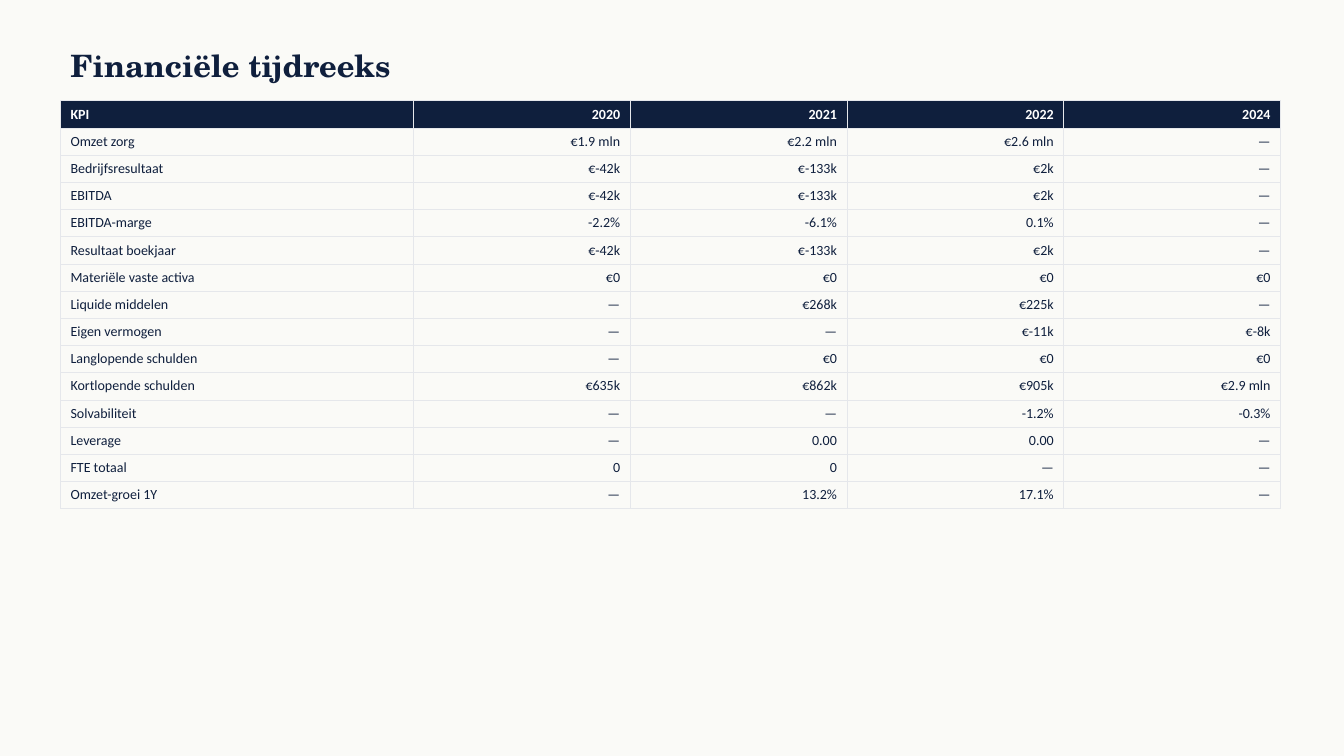
import pptx
import pptx.dml.color
import pptx.enum.text
import pptx.oxml
import pptx.util
from pptx.util import Inches

NAVY = "0F1F3D"
WHITE = "FFFFFF"
PAPER = "FAFAF7"
GRID = "E5E7EB"

KPI_ROWS = [
    ("KPI", "2020", "2021", "2022", "2024"),
    ("Omzet zorg", "€1.9 mln", "€2.2 mln", "€2.6 mln", "—"),
    ("Bedrijfsresultaat", "€-42k", "€-133k", "€2k", "—"),
    ("EBITDA", "€-42k", "€-133k", "€2k", "—"),
    ("EBITDA-marge", "-2.2%", "-6.1%", "0.1%", "—"),
    ("Resultaat boekjaar", "€-42k", "€-133k", "€2k", "—"),
    ("Materiële vaste activa", "€0", "€0", "€0", "€0"),
    ("Liquide middelen", "—", "€268k", "€225k", "—"),
    ("Eigen vermogen", "—", "—", "€-11k", "€-8k"),
    ("Langlopende schulden", "—", "€0", "€0", "€0"),
    ("Kortlopende schulden", "€635k", "€862k", "€905k", "€2.9 mln"),
    ("Solvabiliteit", "—", "—", "-1.2%", "-0.3%"),
    ("Leverage", "—", "0.00", "0.00", "—"),
    ("FTE totaal", "0", "0", "—", "—"),
    ("Omzet-groei 1Y", "—", "13.2%", "17.1%", "—"),
]
COLUMN_WIDTHS = [3.5] + [2.15] * 4
ROW_HEIGHT = 0.27


def rgb(value):
    return pptx.dml.color.RGBColor.from_string(value)


def set_font(p, name, size, color, bold):
    p.font.name = name
    p.font.size = pptx.util.Pt(size)
    p.font.color.rgb = rgb(color)
    p.font.bold = bold


def set_borders(cell, color, width):
    """Put a solid line on all four sides; call before the cell is filled."""
    props = cell._tc.get_or_add_tcPr()
    ns = 'xmlns:a="http://schemas.openxmlformats.org/drawingml/2006/main"'
    for side in ("lnL", "lnR", "lnT", "lnB"):
        props.append(pptx.oxml.parse_xml(
            f'<a:{side} {ns} w="{pptx.util.Pt(width)}"><a:solidFill>'
            f'<a:srgbClr val="{color}"/></a:solidFill></a:{side}>'))


def add_title(slide, text):
    sp = slide.shapes.add_textbox(Inches(0.6), Inches(0.4), Inches(12), Inches(0.5))
    tf = sp.text_frame
    tf.word_wrap = True
    tf.vertical_anchor = pptx.enum.text.MSO_ANCHOR.MIDDLE
    p = tf.paragraphs[0]
    p.text = text
    set_font(p, "TeX Gyre Schola", 22, NAVY, True)


def style_cell(cell, text, is_header, is_label):
    set_borders(cell, GRID, 0.5)
    if is_header:
        cell.fill.solid()
        cell.fill.fore_color.rgb = rgb(NAVY)
    else:
        cell.fill.background()
    p = cell.text_frame.paragraphs[0]
    p.text = text
    if not is_label:
        p.alignment = pptx.enum.text.PP_ALIGN.RIGHT
    set_font(p, "Calibri", 10, WHITE if is_header else NAVY, is_header)


def add_kpi_table(slide, rows):
    table = slide.shapes.add_table(
        len(rows), len(COLUMN_WIDTHS), Inches(0.6), Inches(1),
        Inches(sum(COLUMN_WIDTHS)), Inches(ROW_HEIGHT * len(rows))).table
    table.horz_banding = False
    for column, width in zip(table.columns, COLUMN_WIDTHS):
        column.width = Inches(width)
    for i, values in enumerate(rows):
        table.rows[i].height = Inches(ROW_HEIGHT)
        for j, text in enumerate(values):
            style_cell(table.cell(i, j), text, i == 0, j == 0)


def main():
    prs = pptx.Presentation()
    prs.slide_width = Inches(13.33)
    prs.slide_height = Inches(7.5)
    slide = prs.slides.add_slide(prs.slide_layouts[6])
    slide.background.fill.solid()
    slide.background.fill.fore_color.rgb = rgb(PAPER)
    add_title(slide, "Financiële tijdreeks")
    add_kpi_table(slide, KPI_ROWS)
    prs.save("out.pptx")


if __name__ == "__main__":
    main()
